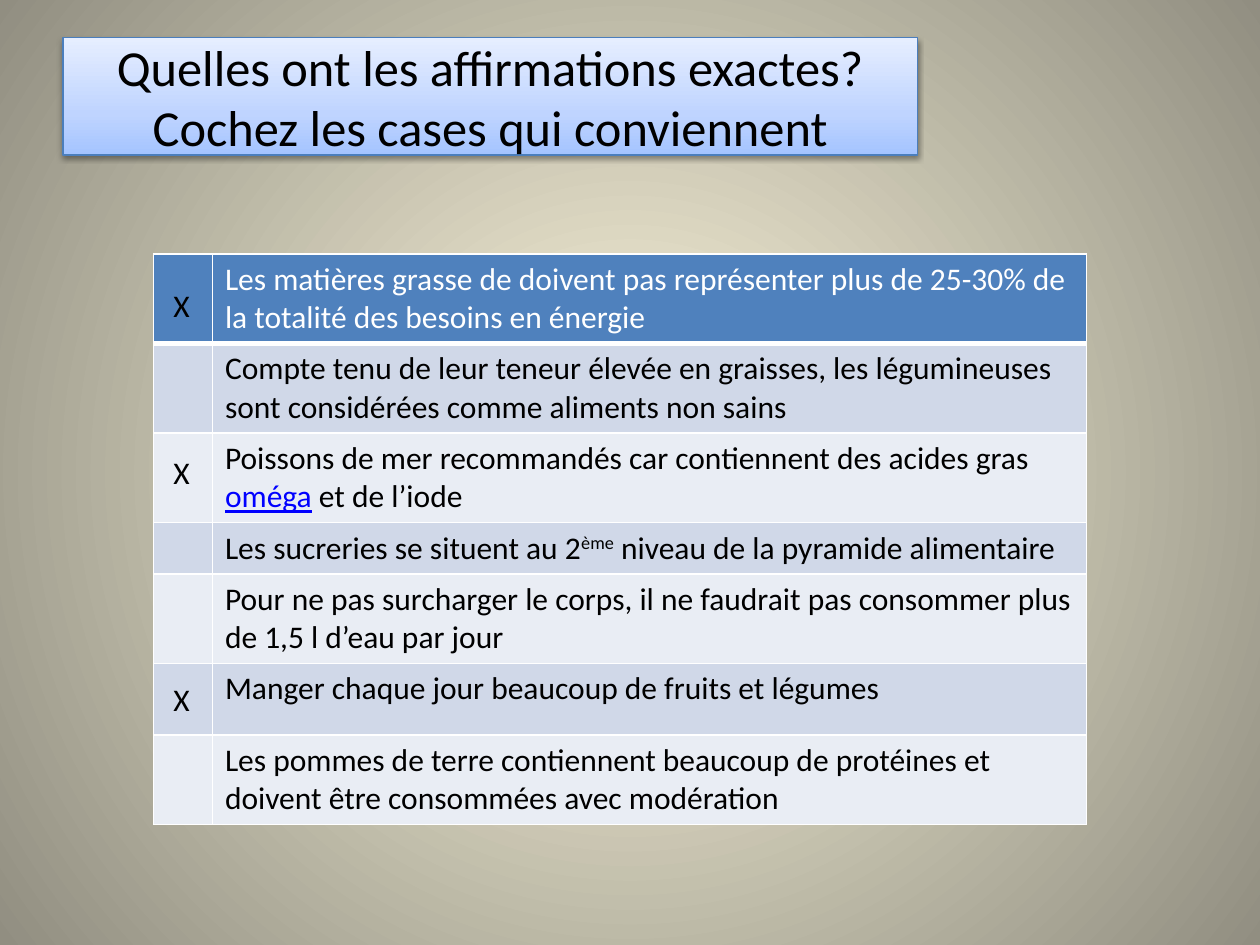
from lxml import etree
from pptx import Presentation
from pptx.dml.color import RGBColor
from pptx.enum.shapes import MSO_SHAPE as Shape
from pptx.enum.text import MSO_ANCHOR as Anchor, MSO_AUTO_SIZE as AutoSize, PP_ALIGN as Align
from pptx.oxml.ns import qn
from pptx.util import Pt

BLACK, WHITE, LINK = "000000", "FFFFFF", "0000FF"
HEADER, BANDS = "4F81BD", ("E9EDF4", "D0D8E8")
TITLE = ["Quelles ont les affirmations exactes?", "Cochez les cases qui conviennent"]
# Each statement is a list of runs: text, or (text, style).
STATEMENTS = [
    ["Les matières grasse de doivent pas représenter plus de 25-30% de la totalité des besoins en énergie"],
    ["Compte tenu de leur teneur élevée en graisses, les légumineuses sont considérées comme aliments non sains"],
    ["Poissons de mer recommandés car contiennent des acides gras ", ("oméga", "link"), " et de l’iode"],
    ["Les sucreries se situent au 2", ("ème", "super"), " niveau de la pyramide alimentaire"],
    ["Pour ne pas surcharger le corps, il ne faudrait pas consommer plus de 1,5 l d’eau par jour"],
    ["Manger chaque jour beaucoup de fruits et légumes"],
    ["Les pommes de terre contiennent beaucoup de protéines et doivent être consommées avec modération"],
]
ROW_HEIGHTS = [29.2] * 5 + [41, 29.2]
MARK_TOPS = [160, 255.5, 385]


def color(hex_text):
    return RGBColor.from_string(hex_text)


def add_xml(parent, tag, **attributes):
    return etree.SubElement(parent, qn(tag), attributes)


def set_gradient(fill, owner, stops):
    """Give the fill these (percent, colour) stops and return its XML element, without direction."""
    fill.gradient()
    gradient = owner.find(".//" + qn("a:gradFill"))
    for child in list(gradient):
        gradient.remove(child)
    stop_list = add_xml(gradient, "a:gsLst")
    for percent, hex_text in stops:
        stop = add_xml(stop_list, "a:gs", pos=str(percent * 1000))
        add_xml(stop, "a:srgbClr", val=hex_text)
    return gradient


class Quiz:
    font = "Calibri"
    size = 18

    def __init__(self, deck):
        self.page = deck.slides.add_slide(deck.slide_layouts[6])

    def background(self, stops):
        gradient = set_gradient(self.page.background.fill, self.page.element, stops)
        path = add_xml(gradient, "a:path", path="circle")
        add_xml(path, "a:fillToRect", l="50000", t="50000", r="50000", b="50000")

    def span(self, para, text, ink=BLACK, size=None, style=None):
        span = para.add_run()
        span.text = text
        font = span.font
        font.name, font.size, font.bold = self.font, Pt(size or self.size), False
        font.color.rgb = color(LINK if style == "link" else ink)
        if style == "link":
            font.underline = True
        elif style == "super":
            font._element.set("baseline", "30000")

    def title(self, lines, left, top, width, height):
        box = self.page.shapes.add_shape(Shape.RECTANGLE, Pt(left), Pt(top), Pt(width), Pt(height))
        stops = [(0, "A4C4FF"), (35, "BFD4FF"), (100, "E6EEFF")]
        gradient = set_gradient(box.fill, box.element, stops)
        add_xml(gradient, "a:lin", ang="16200000", scaled="1")
        box.line.color.rgb = color("4B7EBC")
        box.line.width = Pt(0.75)
        box.shadow.inherit = False
        shadow = add_xml(box.element.find(".//" + qn("a:effectLst")), "a:outerShdw",
                         blurRad=str(Pt(3.1)), dist=str(Pt(1.6)), dir="5400000", rotWithShape="0")
        add_xml(add_xml(shadow, "a:srgbClr", val=BLACK), "a:alpha", val="38000")
        frame = box.text_frame
        frame.word_wrap = True
        frame.vertical_anchor = Anchor.MIDDLE
        para = frame.paragraphs[0]
        para.alignment = Align.CENTER
        for number, line in enumerate(lines):
            if number:
                para.add_line_break()
            self.span(para, line, size=28.8)

    def borders(self, cell, bottom):
        """Draw white cell edges; must come before the cell's fill."""
        properties = cell._tc.get_or_add_tcPr()
        for tag, width in (("a:lnL", 1), ("a:lnR", 1), ("a:lnT", 1), ("a:lnB", bottom)):
            edge = add_xml(properties, tag, w=str(Pt(width)))
            add_xml(add_xml(edge, "a:solidFill"), "a:srgbClr", val=WHITE)

    def table(self, statements, left, top, widths, heights, frame_height):
        frame = self.page.shapes.add_table(len(statements), len(widths), Pt(left), Pt(top),
                                           Pt(sum(widths)), Pt(frame_height))
        table = frame.table
        table.horz_banding = False
        table.first_row = False
        for column, width in zip(table.columns, widths):
            column.width = Pt(width)
        for number, (row, height) in enumerate(zip(table.rows, heights)):
            row.height = Pt(height)
            for cell in row.cells:
                self.borders(cell, bottom=1 if number else 3)
                cell.fill.solid()
                cell.fill.fore_color.rgb = color(BANDS[number % 2] if number else HEADER)
            para = table.cell(number, 1).text_frame.paragraphs[0]
            for part in statements[number]:
                text, style = (part, None) if isinstance(part, str) else part
                self.span(para, text, BLACK if number else WHITE, style=style)
        frame.height = Pt(frame_height)

    def mark(self, left, top):
        box = self.page.shapes.add_textbox(Pt(left), Pt(top), Pt(22.5), Pt(29))
        box.text_frame.word_wrap = False
        box.text_frame.auto_size = AutoSize.SHAPE_TO_FIT_TEXT
        self.span(box.text_frame.paragraphs[0], "X")


def main():
    deck = Presentation()
    deck.slide_width, deck.slide_height = Pt(720), Pt(540)
    quiz = Quiz(deck)
    quiz.background([(0, "FCF7DD"), (100, "918E81")])
    quiz.title(TITLE, 36, 21.6, 488.4, 67)
    quiz.table(STATEMENTS, 87.8, 145.2, [33.6, 499.4], ROW_HEIGHTS, 322.5)
    for top in MARK_TOPS:
        quiz.mark(92, top)
    deck.save("out.pptx")


if __name__ == "__main__":
    main()
